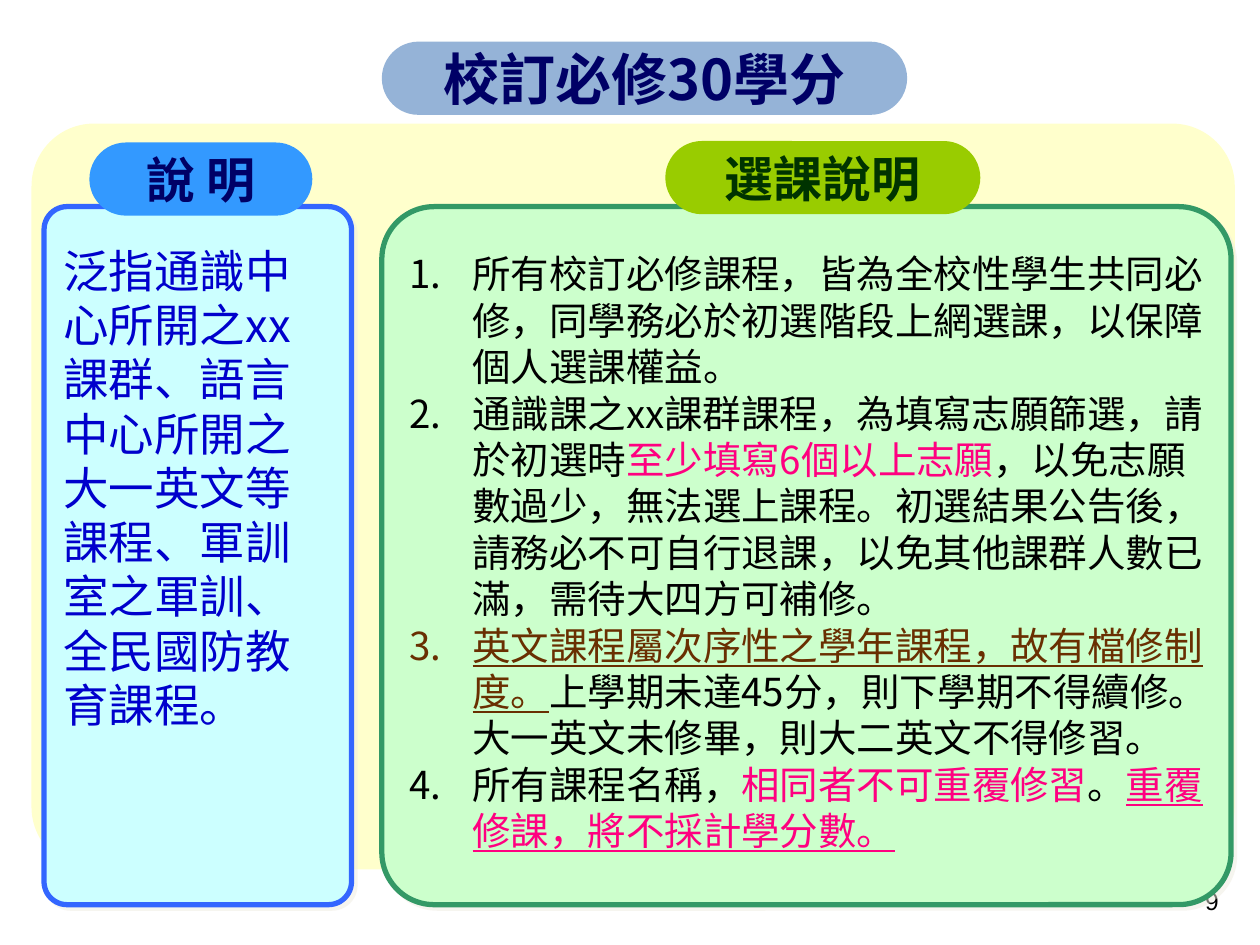
from lxml.etree import SubElement
from pptx import Presentation
from pptx.dml.color import RGBColor
from pptx.enum.shapes import MSO_SHAPE as Shape
from pptx.enum.text import MSO_ANCHOR as Anchor, MSO_AUTO_SIZE as AutoSize, PP_ALIGN as Align
from pptx.oxml.ns import qn
from pptx.util import Pt

COLORS = {
    "cream": "FFFFCC", "aqua": "CCFFFF", "mint": "CCFFCC",
    "blue line": "3366FF", "green line": "339966", "shadow": "EEECE1",
    "sky": "3399FF", "lime": "99CC00", "steel": "95B3D7",
    "navy": "000066", "forest": "003300", "blue": "0000CC",
    "black": "000000", "pink": "FF0080", "brown": "692F01",
}
HEADING_FONT, TEXT_FONT = "Noto Sans CJK SC", "Noto Sans CJK JP"

TITLE = "校訂必修30學分"
TITLE_PLACE = (218.2, 23.8, 300.2, 41.8)
BACKDROP_PLACE = (18, 70.6, 687.6, 426.2)
NUMBER_PLACE = (535.7, 502.6, 167.8, 37.4)
RULES_PLACE = (234, 143, 455, 355)
PANELS = [
    ((25.2, 118.1, 175.7, 398.9), "aqua", "blue line"),
    ((218.2, 118.1, 485.3, 398.9), "mint", "green line"),
]
HEADINGS = [
    ("說 明", (51.1, 81.4, 127.4, 41.8), "sky", "navy"),
    ("選課說明", (380.2, 80.6, 180, 41.8), "lime", "forest"),
]
SUMMARY = "泛指通識中心所開之xx課群、語言中心所開之大一英文等課程、軍訓室之軍訓、全民國防教育課程。"
RULES = [
    [("所有校訂必修課程，皆為全校性學生共同必修，同學務必於初選階段上網選課，以保障個人選課權益。", "black", False)],
    [("通識課之xx課群課程，為填寫志願篩選，請於初選時", "black", False),
     ("至少填寫6個以上志願", "pink", False),
     ("，以免志願數過少，無法選上課程。初選結果公告後，請務必不可自行退課，以免其他課群人數已滿，需待大四方可補修。", "black", False)],
    [("英文課程屬次序性之學年課程，故有檔修制度。", "brown", True),
     ("上學期未達45分，則下學期不得續修。大一英文未修畢，則大二英文不得修習。", "black", False)],
    [("所有課程名稱，", "black", False),
     ("相同者不可重覆修習", "pink", False),
     ("。", "black", False),
     ("重覆修課，將不採計學分數。", "pink", True)],
]


def color(name):
    return RGBColor.from_string(COLORS[name])


def points(place):
    return [Pt(value) for value in place]


def move(box, place):
    box.left, box.top, box.width, box.height = points(place)


def format_para(para, name, size, ink, bold=False, align=Align.LEFT, spacing=None):
    para.alignment = align
    para.space_before = Pt(0)
    if spacing:
        para.line_spacing = Pt(spacing)
    font = para.font
    font.name, font.size, font.bold = name, Pt(size), bold
    font.color.rgb = color(ink)
    defaults = para._p.get_or_add_pPr().find(qn("a:defRPr"))
    SubElement(defaults, qn("a:ea"), typeface=name)


def add_rounded(page, place, fill, corner, line=None):
    box = page.shapes.add_shape(Shape.ROUNDED_RECTANGLE, *points(place))
    box.adjustments[0] = corner
    box.shadow.inherit = False
    box.fill.solid()
    box.fill.fore_color.rgb = color(fill)
    if line:
        box.line.color.rgb = color(line)
        box.line.width = Pt(3)
    else:
        box.line.fill.background()
    return box


def add_shadow(box):
    effects = box.element.spPr.find(qn("a:effectLst"))
    shadow = SubElement(effects, qn("a:outerShdw"), dist=str(Pt(2.8)), dir="2700000", algn="ctr", rotWithShape="0")
    tint = SubElement(shadow, qn("a:srgbClr"), val=COLORS["shadow"])
    SubElement(tint, qn("a:alpha"), val="50000")


def write_heading(box, text, size, ink):
    frame = box.text_frame
    frame.text = text
    frame.auto_size = AutoSize.NONE
    frame.word_wrap = False
    frame.vertical_anchor = Anchor.MIDDLE
    format_para(frame.paragraphs[0], HEADING_FONT, size, ink, True, Align.CENTER)


def write_rules(body):
    frame = body.text_frame
    frame.auto_size = AutoSize.NONE
    frame.word_wrap = True
    frame.vertical_anchor = Anchor.TOP
    frame.margin_left = frame.margin_top = frame.margin_right = frame.margin_bottom = 0
    for index, rule in enumerate(RULES):
        para = frame.add_paragraph() if index else frame.paragraphs[0]
        settings = para._p.get_or_add_pPr()
        settings.set("marL", str(Pt(36)))
        settings.set("indent", str(Pt(-36)))
        SubElement(settings, qn("a:buFont"), typeface="+mj-lt")
        SubElement(settings, qn("a:buAutoNum"), type="arabicPeriod")
        format_para(para, TEXT_FONT, 22, "black", spacing=26.5)
        for text, ink, underlined in rule:
            span = para.add_run()
            span.text = text
            span.font.color.rgb = color(ink)
            if underlined:
                span.font.underline = True


def main():
    deck = Presentation()
    deck.slide_width, deck.slide_height = Pt(720), Pt(540)
    page = deck.slides.add_slide(deck.slide_layouts[1])
    title, body = page.shapes.title, page.placeholders[1]

    add_rounded(page, BACKDROP_PLACE, "cream", 0.084)
    number = page.shapes.add_textbox(*points(NUMBER_PLACE)).text_frame
    number.word_wrap = True
    number.text = "9"
    format_para(number.paragraphs[0], "Arial", 14, "black", align=Align.RIGHT)

    panels = [add_rounded(page, place, fill, 0.075, line) for place, fill, line in PANELS]
    for panel in panels:
        add_shadow(panel)
    summary = panels[0].text_frame
    summary.text = SUMMARY
    summary.word_wrap = True
    summary.vertical_anchor = Anchor.TOP
    summary.margin_top = Pt(17)
    format_para(summary.paragraphs[0], TEXT_FONT, 26, "blue", spacing=31)

    for text, place, fill, ink in HEADINGS:
        write_heading(add_rounded(page, place, fill, 0.5), text, 28, ink)
    add_rounded(page, TITLE_PLACE, "steel", 0.5)

    for holder, place in ((title, TITLE_PLACE), (body, RULES_PLACE)):
        move(holder, place)
        holder.element.getparent().append(holder.element)
    write_heading(title, TITLE, 32, "navy")
    write_rules(body)
    deck.save("out.pptx")


if __name__ == "__main__":
    main()
